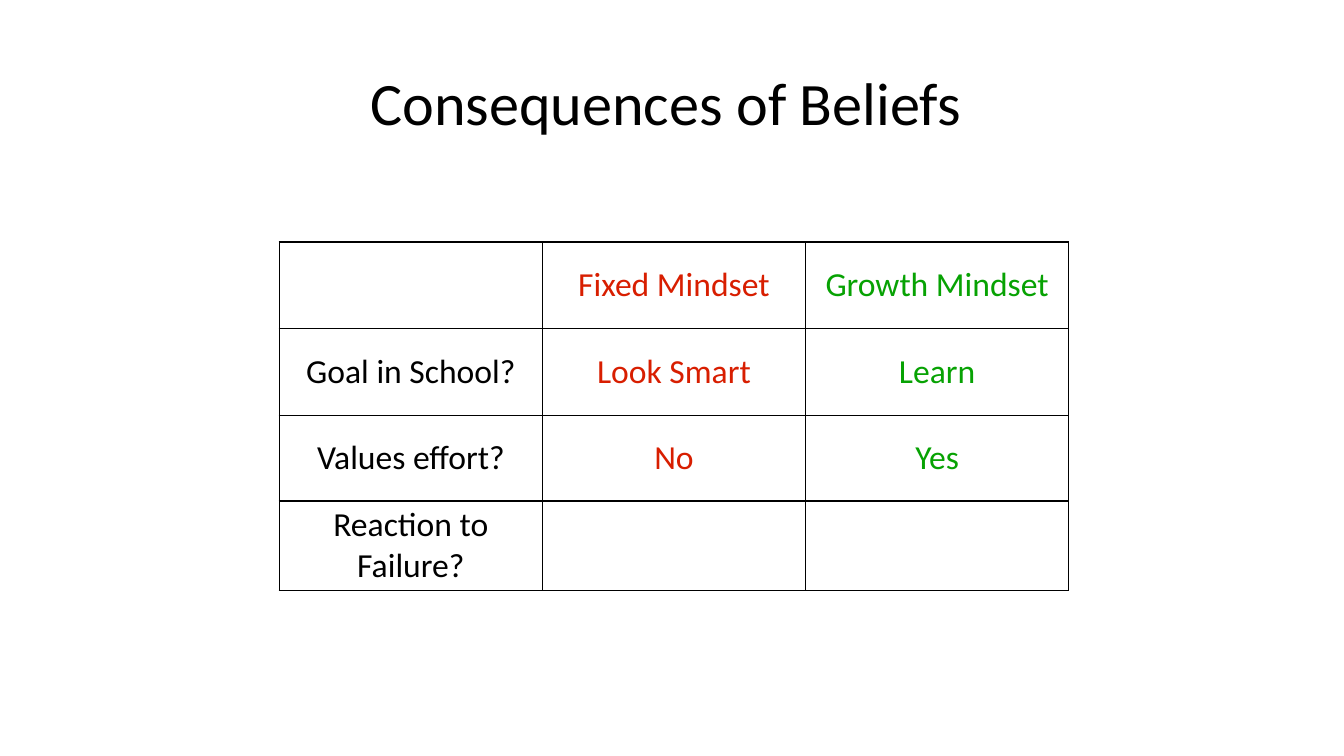
from lxml import etree
from pptx import Presentation
from pptx import util as u
from pptx.dml.color import RGBColor
from pptx.enum import text
from pptx.oxml import ns

BLACK = RGBColor(0x00, 0x00, 0x00)
RED = RGBColor(0xD8, 0x1E, 0x00)
GREEN = RGBColor(0x07, 0xA2, 0x03)
FONT = "Calibri"
WIDE, HIGH = 13.33, 7.5
INSET = 0.04
TINTS = (BLACK, RED, GREEN)
ROWS = (
    ("", "Fixed Mindset", "Growth Mindset"),
    ("Goal in School?", "Look Smart", "Learn"),
    ("Values effort?", "No", "Yes"),
    ("Reaction to Failure?", "", ""),
)
TALL = (0.86, 0.86, 0.85, 0.89)


def style(frame, size, tint):
    para = frame.paragraphs[0]
    para.alignment = text.PP_ALIGN.CENTER
    for run in para.runs:
        run.font.name = FONT
        run.font.size = u.Pt(size)
        run.font.color.rgb = tint


def border(cell):
    props = cell._tc.get_or_add_tcPr()
    for spot, side in enumerate(("lnL", "lnR", "lnT", "lnB")):
        line = etree.Element(ns.qn("a:" + side), w=str(u.Pt(1)))
        fill = etree.SubElement(line, ns.qn("a:solidFill"))
        etree.SubElement(fill, ns.qn("a:srgbClr"), val=str(BLACK))
        props.insert(spot, line)


def title(slide, left, top, width, height):
    box = slide.shapes.add_textbox(*map(u.Inches, (left, top, width, height)))
    frame = box.text_frame
    frame.word_wrap = True
    frame.vertical_anchor = text.MSO_ANCHOR.MIDDLE
    frame.margin_left = frame.margin_right = 0
    frame.margin_top = frame.margin_bottom = 0
    frame.text = "Consequences of Beliefs"
    style(frame, 43, BLACK)


def beliefs(slide, left, top, width):
    area = map(u.Inches, (left, top, width, sum(TALL)))
    table = slide.shapes.add_table(len(ROWS), len(TINTS), *area).table
    table.first_row = table.horz_banding = False
    for col in table.columns:
        col.width = u.Inches(width / len(TINTS))
    for row, tall, words in zip(table.rows, TALL, ROWS):
        row.height = u.Inches(tall)
        for cell, word, tint in zip(row.cells, words, TINTS):
            cell.fill.background()
            cell.vertical_anchor = text.MSO_ANCHOR.MIDDLE
            cell.margin_left = cell.margin_right = u.Inches(INSET)
            cell.margin_top = cell.margin_bottom = u.Inches(INSET)
            cell.text_frame.text = word
            style(cell.text_frame, 24, tint)
            border(cell)


def main():
    deck = Presentation()
    deck.slide_width = u.Inches(WIDE)
    deck.slide_height = u.Inches(HIGH)
    slide = deck.slides.add_slide(deck.slide_layouts[6])
    title(slide, 2.34, 0.07, 8.52, 1.88)
    beliefs(slide, 2.77, 2.4, 7.83)
    deck.save("out.pptx")


if __name__ == "__main__":
    main()
